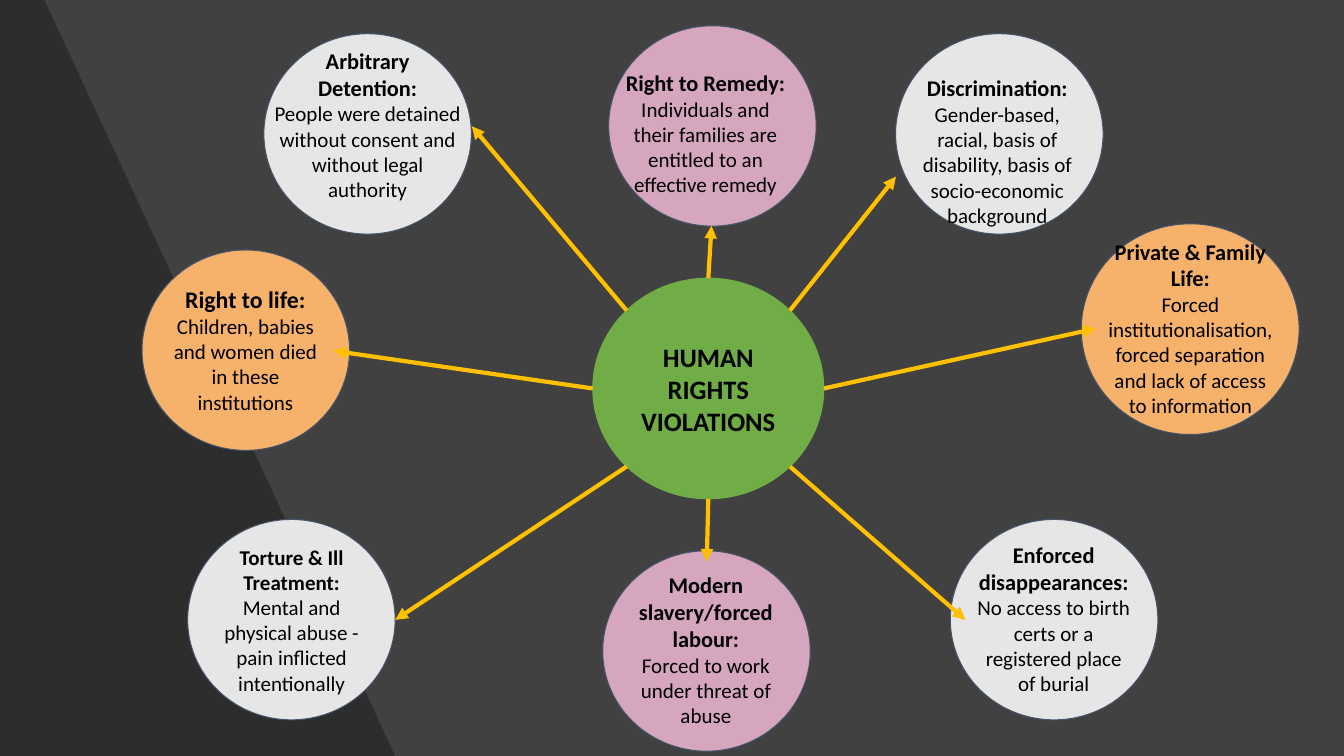
from dataclasses import dataclass
from math import hypot

from lxml.etree import SubElement
from pptx import Presentation
from pptx.dml.color import RGBColor as Rgb
from pptx.enum.shapes import MSO_CONNECTOR as Connector, MSO_SHAPE as Preset
from pptx.enum.text import MSO_ANCHOR as Anchor, MSO_AUTO_SIZE as AutoSize, PP_ALIGN as Align
from pptx.oxml.ns import qn
from pptx.util import Cm, Pt


@dataclass(frozen=True)
class Theme:
    font: str = "Calibri"
    ink: str = "000000"
    background: str = "414141"
    hub: str = "70AD47"
    outline: str = "44546A"
    arrow: str = "FFC000"
    orange: str = "F6B26B"
    grey: str = "E7E6E6"
    pink: str = "D5A6BD"
    hub_size: int = 19
    body_size: int = 15
    heading_size: int = 16
    large_heading: int = 17
    outline_width: float = 0.75
    arrow_width: float = 3
    inset: float = 0.25
    shade_alpha: int = 30000


class MindMap:
    def __init__(self, slide, theme):
        self.slide, self.theme = slide, theme
        background = slide.background.fill
        background.solid()
        background.fore_color.rgb = Rgb.from_string(theme.background)

    def paint(self, shape, fill, line=None):
        shape.shadow.inherit = False
        shape.fill.solid()
        shape.fill.fore_color.rgb = Rgb.from_string(fill)
        if line:
            shape.line.color.rgb = Rgb.from_string(line)
            shape.line.width = Pt(self.theme.outline_width)
        else:
            shape.line.fill.background()

    def shade(self, corners):
        (x, y), *others = [(Cm(x), Cm(y)) for x, y in corners]
        builder = self.slide.shapes.build_freeform(x, y)
        builder.add_line_segments(others, close=True)
        panel = builder.convert_to_shape()
        self.paint(panel, self.theme.ink)
        color = panel.element.spPr.find(qn("a:solidFill"))[0]
        SubElement(color, qn("a:alpha"), val=str(self.theme.shade_alpha))

    def circle(self, box, fill, line):
        ellipse = self.slide.shapes.add_shape(Preset.OVAL, *map(Cm, box))
        self.paint(ellipse, fill, line)
        return ellipse

    def set_lines(self, shape, lines, anchor):
        """Fill a shape with (text, size, bold) lines."""
        frame = shape.text_frame
        frame.word_wrap = True
        frame.vertical_anchor = anchor
        frame.margin_left = frame.margin_right = Cm(self.theme.inset)
        frame.margin_top = frame.margin_bottom = Cm(self.theme.inset)
        frame.text = "\n".join(text for text, _, _ in lines)
        for paragraph, (_, size, bold) in zip(frame.paragraphs, lines):
            paragraph.alignment = Align.CENTER
            font = paragraph.runs[0].font
            font.name, font.size, font.bold = self.theme.font, Pt(size), bold
            font.color.rgb = Rgb.from_string(self.theme.ink)

    def caption(self, box, heading, body, size):
        label = self.slide.shapes.add_textbox(*map(Cm, box))
        lines = [(heading, size, True), (body, self.theme.body_size, False)]
        self.set_lines(label, lines, Anchor.TOP)
        label.text_frame.auto_size = AutoSize.SHAPE_TO_FIT_TEXT

    def arrow(self, start, tip):
        link = self.slide.shapes.add_connector(Connector.STRAIGHT, *map(Cm, (*start, *tip)))
        link.line.color.rgb = Rgb.from_string(self.theme.arrow)
        link.line.width = Pt(self.theme.arrow_width)
        properties = link.element.spPr
        SubElement(properties.find(qn("a:ln")), qn("a:tailEnd"), type="triangle")
        SubElement(properties, qn("a:effectLst"))


@dataclass(frozen=True)
class Violation:
    heading: str
    body: str
    fill: str
    corner: tuple
    caption: tuple
    direction: tuple  # side of the hub where the arrow leaves
    tip: tuple
    size: tuple = (5.23, 5.05)
    heading_size: int = Theme.heading_size


HUB = (14.94, 7.01, 5.82, 5.56)

VIOLATIONS = [
    Violation("Right to life:", "Children, babies and women died in these institutions",
              Theme.orange, (3.58, 6.3), (3.96, 6.93, 4.45, 3.81),
              (-1, 0), (8.41, 8.84), heading_size=Theme.large_heading),
    Violation("Arbitrary Detention:",
              "People were detained without consent and without legal authority",
              Theme.grey, (6.65, 0.85), (6.65, 0.94, 5.23, 4.45), (-1, -1), (11.89, 3.18)),
    Violation("Discrimination:",
              "Gender-based, racial, basis of disability, basis of socio-economic background",
              Theme.grey, (22.57, 0.85), (22.91, 1.63, 4.45, 4.39), (1, -1), (22.58, 4.45)),
    Violation("Modern slavery/forced labour:", "Forced to work under threat of abuse",
              Theme.pink, (15.19, 13.88), (15.72, 14.15, 4.14, 4.5), (0, 1), (17.81, 14.15)),
    Violation("Right to Remedy:",
              "Individuals and their families are entitled to an effective remedy",
              Theme.pink, (15.34, 0.65), (15.39, 1.5, 4.78, 3.76), (0, -1), (17.93, 5.69)),
    Violation("Torture & Ill Treatment:",
              "Mental and physical abuse - pain inflicted intentionally",
              Theme.grey, (4.73, 13.09), (5.28, 13.46, 4.14, 5), (-1, 1), (9.96, 15.62),
              heading_size=Theme.body_size),
    Violation("Enforced disappearances:",
              "No access to birth certs or a registered place of burial",
              Theme.grey, (23.95, 13.09), (24.33, 13.39, 4.45, 4.45), (1, 1), (24.33, 15.62)),
    Violation("Private & Family Life:",
              "Forced institutionalisation, forced separation and lack of access to information",
              Theme.orange, (27.25, 5.64), (27.61, 5.74, 4.78, 5.08),
              (1, 0), (27.61, 8.28), size=(5.49, 5.31)),
]


def hub_edge(direction):
    """Point on the hub's rim in the given direction."""
    left, top, width, height = HUB
    dx, dy = direction
    reach = 2 * hypot(dx, dy)
    return left + width / 2 + width * dx / reach, top + height / 2 + height * dy / reach


def main():
    deck = Presentation()
    deck.slide_width, deck.slide_height = Cm(33.87), Cm(19.05)
    theme = Theme()
    mind_map = MindMap(deck.slides.add_slide(deck.slide_layouts[6]), theme)

    # Slanted dark panel on the left
    mind_map.shade([(0, 0), (1.12, 0), (9.96, 19.05), (0, 19.05)])

    # Central topic
    hub = mind_map.circle(HUB, theme.hub, theme.hub)
    mind_map.set_lines(hub, [("HUMAN RIGHTS VIOLATIONS", theme.hub_size, True)], Anchor.MIDDLE)

    # Circles, then captions, then arrows on top
    for item in VIOLATIONS:
        mind_map.circle((*item.corner, *item.size), item.fill, theme.outline)
    for item in VIOLATIONS:
        mind_map.caption(item.caption, item.heading, item.body, item.heading_size)
    for item in VIOLATIONS:
        mind_map.arrow(hub_edge(item.direction), item.tip)

    deck.save("out.pptx")


if __name__ == "__main__":
    main()
